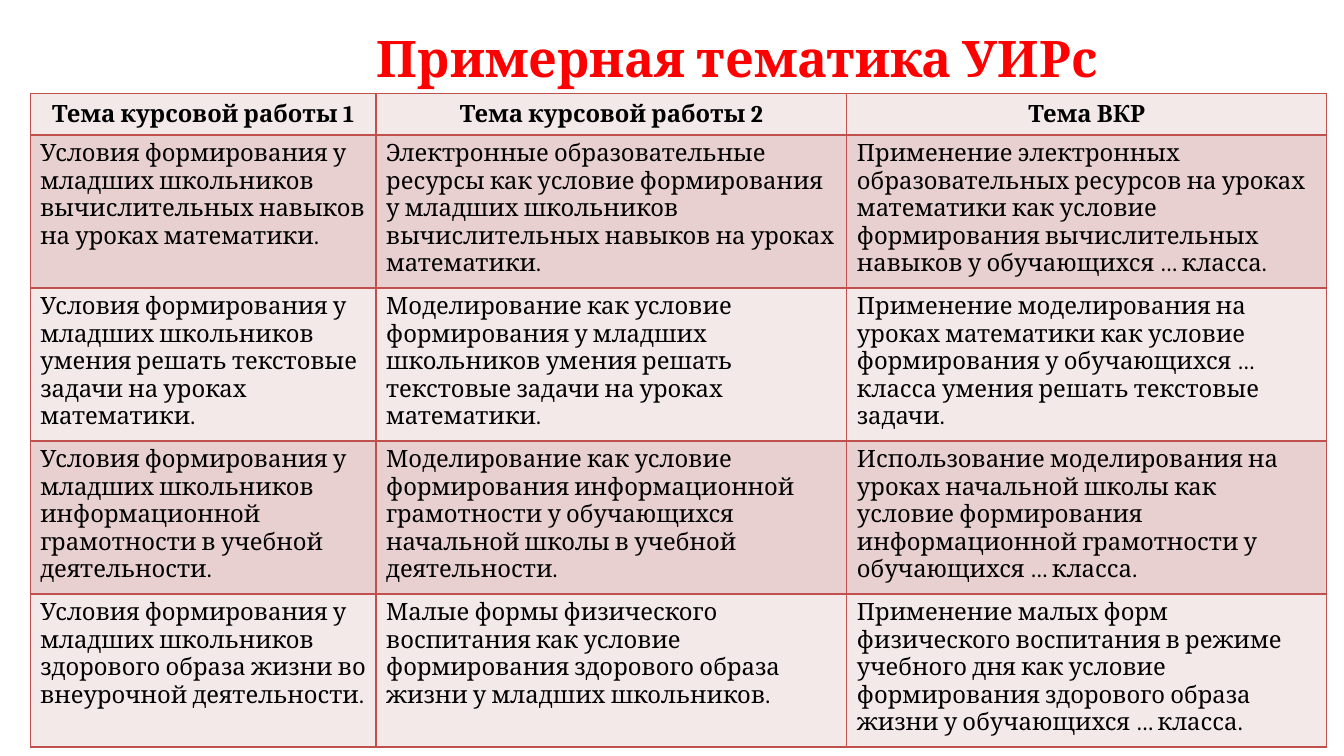
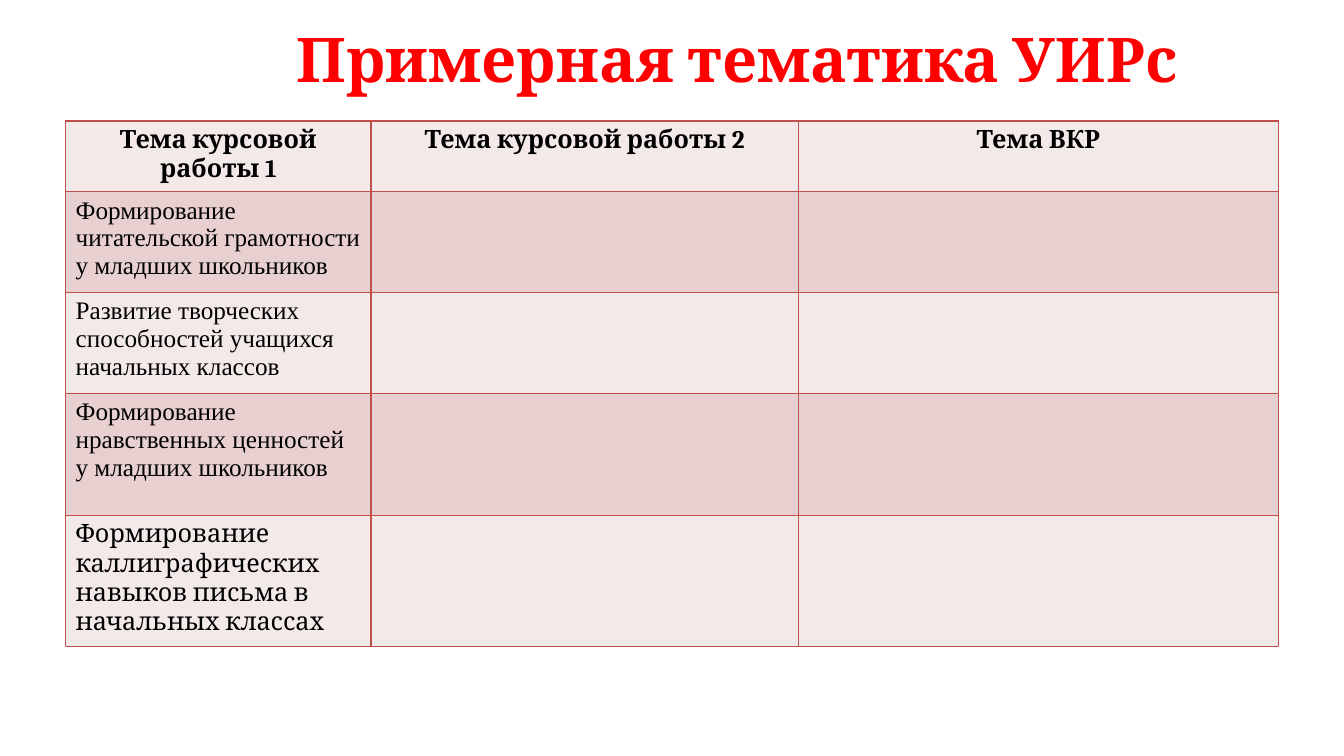
from lxml.etree import SubElement
from pptx import Presentation
from pptx.dml.color import RGBColor
from pptx.enum.text import MSO_ANCHOR as Anchor, PP_ALIGN as Align
from pptx.oxml.ns import qn
from pptx.util import Inches, Pt

COLOURS = {
    "title": "FF0000",
    "text": "000000",
    "border": "C0504D",
    "light": "F4E9E9",
    "dark": "E8D0D0",
}
SERIF = "Cambria"
TIMES = "Times New Roman"
TITLE = "Примерная тематика УИРс"
HEADERS = ["Тема курсовой работы 1", "Тема курсовой работы 2", "Тема ВКР"]

SLIDES = [
    {
        "title_size": 36,
        "text_size": 17,
        "header_anchor": Anchor.MIDDLE,
        "position": (0.3, 0.93),
        "columns": [3.43, 4.67, 4.76],
        "heights": [0.41] + [1.47] * 4,
        "fonts": [SERIF] * 5,
        "topics": [
            [
                "Условия формирования у младших школьников вычислительных навыков на уроках математики.",
                "Электронные образовательные ресурсы как условие формирования у младших школьников вычислительных навыков на уроках математики.",
                "Применение электронных образовательных ресурсов на уроках математики как условие формирования вычислительных навыков у обучающихся … класса.",
            ],
            [
                "Условия формирования у младших школьников умения решать текстовые задачи на уроках математики.",
                "Моделирование как условие формирования у младших школьников умения решать текстовые задачи на уроках математики.",
                "Применение моделирования на уроках математики как условие формирования у обучающихся … класса умения решать текстовые задачи.",
            ],
            [
                "Условия формирования у младших школьников информационной грамотности в учебной деятельности.",
                "Моделирование как условие формирования информационной грамотности у обучающихся начальной школы в учебной деятельности.",
                "Использование моделирования на уроках начальной школы как условие формирования информационной грамотности у обучающихся … класса.",
            ],
            [
                "Условия формирования у младших школьников здорового образа жизни во внеурочной деятельности.",
                "Малые формы физического воспитания как условие формирования здорового образа жизни у младших школьников.",
                "Применение малых форм физического воспитания в режиме учебного дня как условие формирования здорового образа жизни у обучающихся … класса.",
            ],
        ],
    },
    {
        "title_size": 44,
        "text_size": 18,
        "header_anchor": Anchor.TOP,
        "position": (0.65, 1.2),
        "columns": [3.03, 4.24, 4.76],
        "heights": [0.68, 0.93, 0.93, 1.21, 1.26],
        "fonts": [SERIF, TIMES, TIMES, TIMES, SERIF],
        "topics": [
            ["Формирование читательской грамотности у младших школьников", "", ""],
            ["Развитие творческих способностей учащихся начальных классов", "", ""],
            ["Формирование нравственных ценностей у младших школьников", "", ""],
            ["Формирование каллиграфических навыков письма в начальных классах", "", ""],
        ],
    },
]


def write_text(text_frame, text, font_name, size, colour, bold, alignment):
    text_frame.text = text
    paragraph = text_frame.paragraphs[0]
    paragraph.alignment = alignment
    for run in paragraph.runs:
        run.font.name = font_name
        run.font.size = Pt(size)
        run.font.bold = bold
        run.font.color.rgb = RGBColor.from_string(COLOURS[colour])


def add_borders(cell):
    properties = cell._tc.get_or_add_tcPr()
    for side in ("lnL", "lnR", "lnT", "lnB"):
        line = SubElement(properties, qn(f"a:{side}"), w=str(Pt(1)))
        fill = SubElement(line, qn("a:solidFill"))
        SubElement(fill, qn("a:srgbClr"), val=COLOURS["border"])


presentation = Presentation()
presentation.slide_width = Inches(13.33)
presentation.slide_height = Inches(7.5)

for content in SLIDES:
    slide = presentation.slides.add_slide(presentation.slide_layouts[6])

    title = slide.shapes.add_textbox(Inches(1.95), Inches(0.13), Inches(10.73), Inches(0.88))
    title.text_frame.word_wrap = True
    title.text_frame.vertical_anchor = Anchor.MIDDLE
    write_text(title.text_frame, TITLE, SERIF, content["title_size"], "title", True, Align.CENTER)

    rows = [HEADERS] + content["topics"]
    left, top = content["position"]
    table = slide.shapes.add_table(
        len(rows), len(HEADERS), Inches(left), Inches(top),
        Inches(sum(content["columns"])), Inches(sum(content["heights"])),
    ).table
    for column, width in zip(table.columns, content["columns"]):
        column.width = Inches(width)

    for row_index, texts in enumerate(rows):
        table.rows[row_index].height = Inches(content["heights"][row_index])
        is_header = row_index == 0
        for column_index, text in enumerate(texts):
            cell = table.cell(row_index, column_index)
            add_borders(cell)
            cell.fill.solid()
            band = "dark" if row_index % 2 else "light"
            cell.fill.fore_color.rgb = RGBColor.from_string(COLOURS[band])
            cell.vertical_anchor = content["header_anchor"] if is_header else Anchor.TOP
            write_text(
                cell.text_frame, text, content["fonts"][row_index], content["text_size"],
                "text", is_header, Align.CENTER if is_header else Align.LEFT,
            )

presentation.save("out.pptx")
